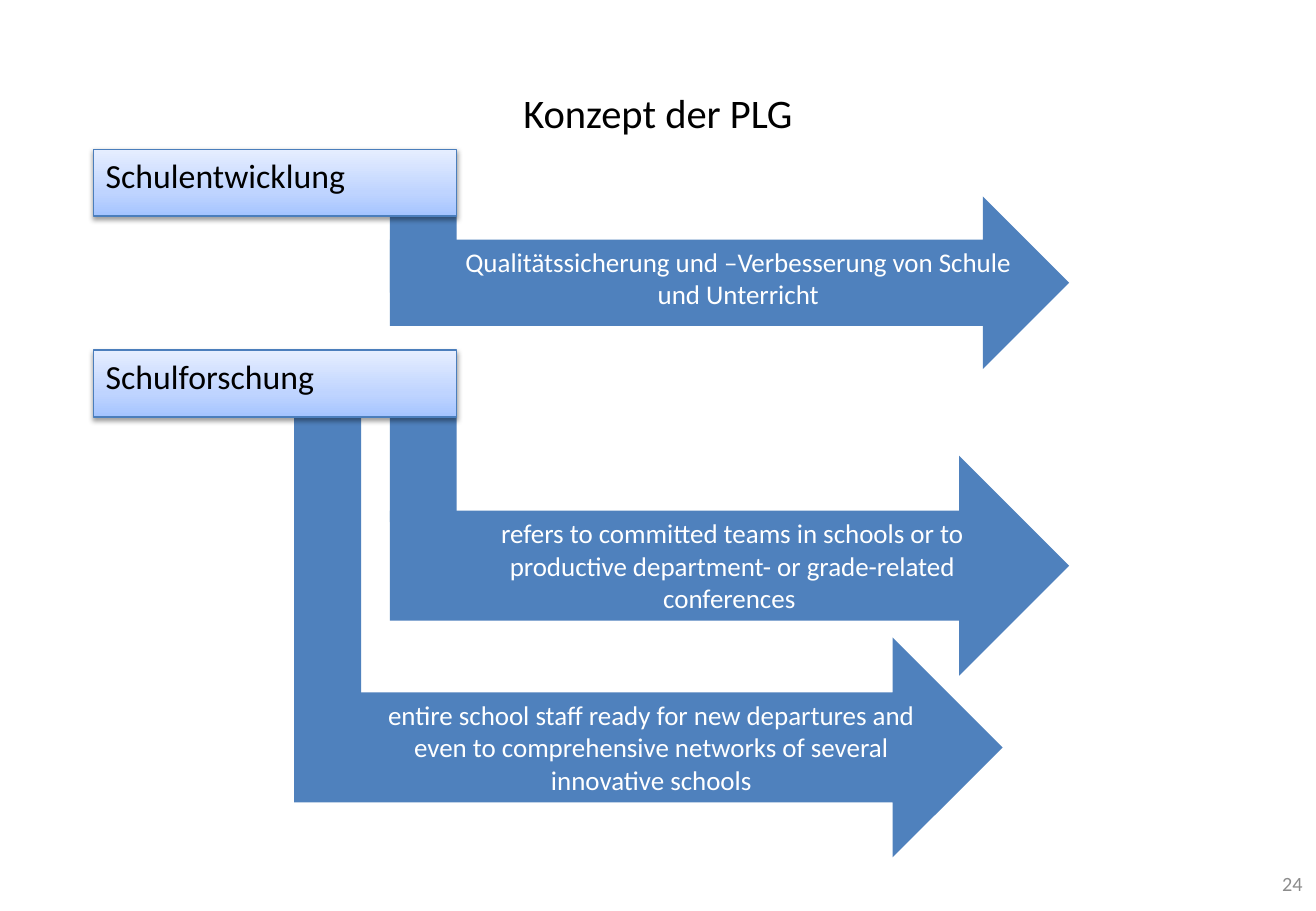
from copy import deepcopy

from lxml import etree
from pptx import Presentation
from pptx import util as u
from pptx.dml.color import RGBColor
from pptx.enum import shapes, text
from pptx.oxml import ns

BLUE = RGBColor(0x4F, 0x81, 0xBD)
EDGE = RGBColor(0x4B, 0x7E, 0xBC)
WHITE = RGBColor(0xFF, 0xFF, 0xFF)
BLACK = RGBColor(0x00, 0x00, 0x00)
GREY = RGBColor(0x8C, 0x8C, 0x8C)
HEADING_STOPS = (
    (0, RGBColor(0xA4, 0xC4, 0xFF)),
    (0.35, RGBColor(0xBF, 0xD4, 0xFF)),
    (1, RGBColor(0xE6, 0xEE, 0xFF)),
)

# Shared positions in cm
HEADING_X, HEADING_W, BAR = 1.96, 7.59, 1.4
OUTER_X, INNER_X = 6.15, 8.15
DEVELOPMENT_Y, RESEARCH_Y = 3.12, 7.32

LEFT, CENTER, RIGHT = text.PP_ALIGN.LEFT, text.PP_ALIGN.CENTER, text.PP_ALIGN.RIGHT
TOP, MIDDLE = text.MSO_ANCHOR.TOP, text.MSO_ANCHOR.MIDDLE
RECT, ARROW = shapes.MSO_SHAPE.RECTANGLE, shapes.MSO_SHAPE.RIGHT_ARROW


class ConceptSlide:
    font = "Calibri"

    def __init__(self, prs):
        self.s = prs.slides.add_slide(prs.slide_layouts[6])

    def add_words(self, sp, words, size, color, align, anchor=TOP):
        tf = sp.text_frame
        tf.word_wrap = True
        tf.vertical_anchor = anchor
        p = tf.paragraphs[0]
        p.alignment = align
        r = p.add_run()
        r.text = words
        r.font.name = self.font
        r.font.size = u.Pt(size)
        r.font.color.rgb = color
        return p

    def label(self, x, y, w, h, words, size, color, align):
        sp = self.s.shapes.add_textbox(u.Cm(x), u.Cm(y), u.Cm(w), u.Cm(h))
        self.add_words(sp, words, size, color, align, MIDDLE)

    def block(self, kind, x, y, w, h):
        sp = self.s.shapes.add_shape(kind, u.Cm(x), u.Cm(y), u.Cm(w), u.Cm(h))
        sp.shadow.inherit = False
        sp.fill.solid()
        sp.fill.fore_color.rgb = BLUE
        sp.line.fill.background()
        return sp

    def heading(self, y, words):
        sp = self.block(RECT, HEADING_X, y, HEADING_W, BAR)
        sp.line.color.rgb = EDGE
        sp.line.width = u.Pt(0.75)
        # Three-stop gradient, light at the top
        sp.fill.gradient()
        sp.fill.gradient_angle = 90
        spPr = sp._element.spPr
        stops = spPr.find(".//" + ns.qn("a:gsLst"))
        stops.append(deepcopy(stops[0]))
        for stop, (position, color) in zip(sp.fill.gradient_stops, HEADING_STOPS):
            stop.position = position
            stop.color.rgb = color
        # Soft shadow below
        shadow = etree.SubElement(
            spPr.find(ns.qn("a:effectLst")), ns.qn("a:outerShdw"),
            blurRad=str(u.Pt(3.1)), dist=str(u.Pt(1.6)), dir="5400000", rotWithShape="0")
        black = etree.SubElement(shadow, ns.qn("a:srgbClr"), val=str(BLACK))
        etree.SubElement(black, ns.qn("a:alpha"), val="38000")
        self.add_words(sp, words, 20, BLACK, LEFT)

    def stem(self, x, y, h):
        self.block(RECT, x, y, BAR, h)

    def arrow(self, x, y, w, h, words):
        p = self.add_words(self.block(ARROW, x, y, w, h), words, 16, WHITE, CENTER)
        p.level = 1
        pPr = p._p.get_or_add_pPr()
        pPr.set("marL", str(u.Cm(1.27)))
        pPr.set("indent", "0")


def main():
    prs = Presentation()
    prs.slide_width, prs.slide_height = u.Cm(27.51), u.Cm(19.05)
    slide = ConceptSlide(prs)

    # Stems linking headings to arrows
    slide.stem(INNER_X, 4.32, 1.8)
    slide.stem(INNER_X, 8.53, 2.39)
    slide.stem(OUTER_X, 8.53, 6.91)

    # Title and page number
    slide.label(1.37, 0.76, 24.77, 3.18, "Konzept der PLG", 24, BLACK, CENTER)
    slide.label(26.24, 18.21, 1.24, 0.51, "24", 12, GREY, RIGHT)

    # School development
    slide.heading(DEVELOPMENT_Y, "Schulentwicklung")
    slide.arrow(INNER_X, 4.11, 14.2, 3.61,
                "Qualitätssicherung und –Verbesserung von Schule und Unterricht")

    # School research
    slide.heading(RESEARCH_Y, "Schulforschung")
    slide.arrow(INNER_X, 9.53, 14.2, 4.6,
                "refers to committed teams in schools or to productive "
                "department- or grade-related conferences ")
    slide.arrow(OUTER_X, 13.33, 14.81, 4.6,
                "entire school staff ready for new departures and even to "
                "comprehensive networks of several innovative schools")

    prs.save("out.pptx")


if __name__ == "__main__":
    main()
